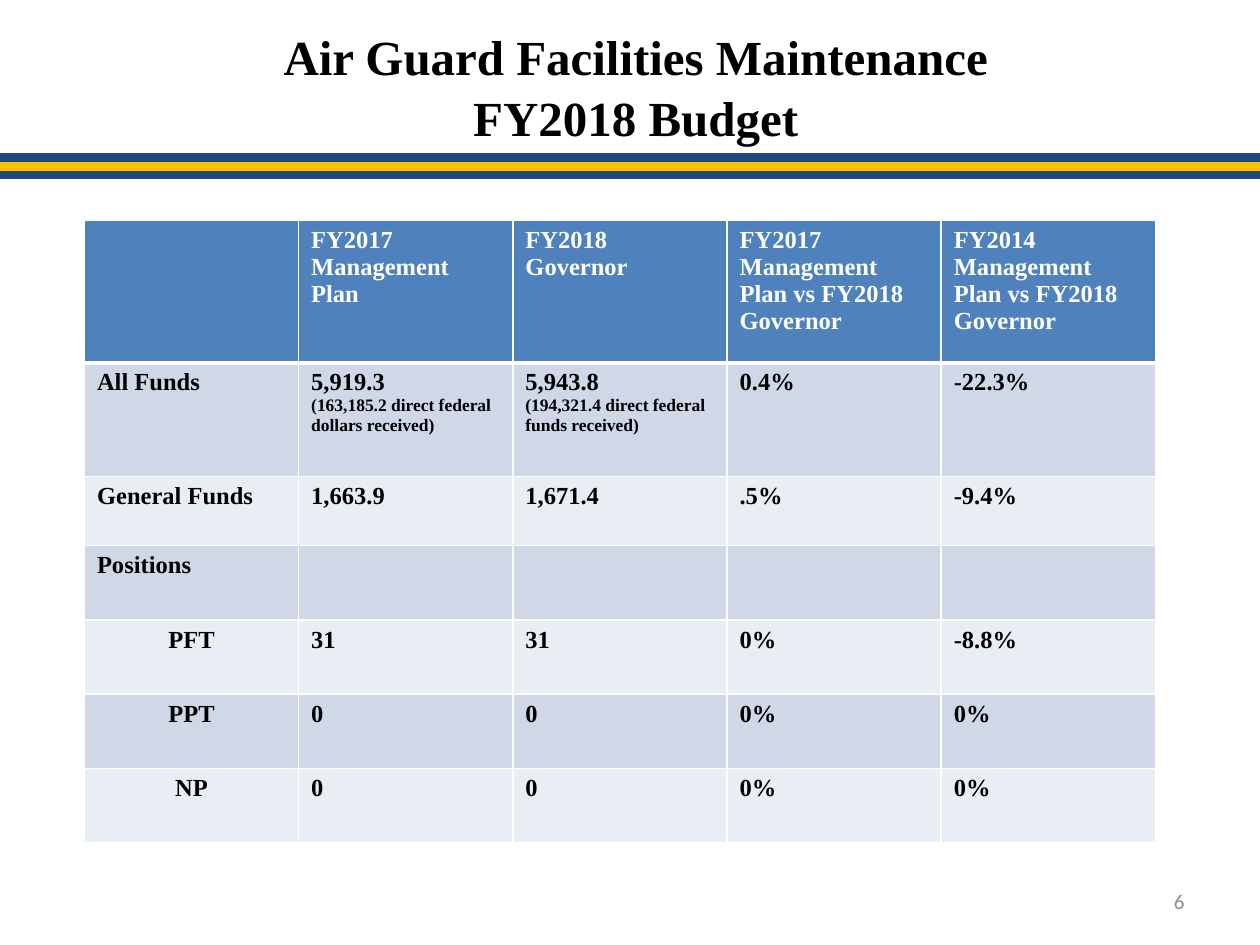
from dataclasses import dataclass

from lxml.etree import SubElement
from pptx import Presentation
from pptx.dml.color import RGBColor
from pptx.enum.shapes import MSO_CONNECTOR
from pptx.enum.text import MSO_ANCHOR, PP_ALIGN
from pptx.oxml.ns import qn
from pptx.slide import Slide
from pptx.util import Inches, Pt

NAVY = RGBColor(0x1F, 0x49, 0x7D)
GOLD = RGBColor(0xFF, 0xC0, 0x00)
BLUE = RGBColor(0x4F, 0x81, 0xBD)
BAND_DARK = RGBColor(0xD0, 0xD8, 0xE8)
BAND_LIGHT = RGBColor(0xE9, 0xED, 0xF4)
WHITE = RGBColor(0xFF, 0xFF, 0xFF)
BLACK = RGBColor(0x00, 0x00, 0x00)
GRAY = RGBColor(0x8C, 0x8C, 0x8C)

HEADINGS = [
    "", "FY2017 Management Plan", "FY2018 Governor",
    "FY2017 Management Plan vs FY2018 Governor",
    "FY2014 Management Plan vs FY2018 Governor",
]
BUDGET = [
    ["All Funds", "5,919.3\n(163,185.2 direct federal dollars received)",
     "5,943.8\n(194,321.4 direct federal funds received)", "0.4%", "-22.3%"],
    ["General Funds", "1,663.9", "1,671.4", ".5%", "-9.4%"],
    ["Positions", "", "", "", ""],
    ["PFT", "31", "31", "0%", "-8.8%"],
    ["PPT", "0", "0", "0%", "0%"],
    ["NP", "0", "0", "0%", "0%"],
]
POSITION_TYPES = {"PFT", "PPT", "NP"}
ROW_HEIGHTS = [1.13, 0.9, 0.55, 0.59, 0.59, 0.59, 0.59]
COLUMN_WIDTH = 1.7


@dataclass
class BudgetSlide:
    s: Slide
    font: str = "Times New Roman"
    number_font: str = "Calibri"

    def run(self, p, text, size, color, bold=True, font=None):
        r = p.add_run()
        r.text = text
        r.font.name = font or self.font
        r.font.size = Pt(size)
        r.font.bold = bold
        r.font.color.rgb = color

    def stripe(self, y, color):
        line = self.s.shapes.add_connector(
            MSO_CONNECTOR.STRAIGHT, Inches(0), Inches(y), Inches(10), Inches(y))
        line.line.color.rgb = color
        line.line.width = Pt(5)
        SubElement(line._element.spPr, qn("a:effectLst"))

    def text_frame(self, left, top, width, height):
        sp = self.s.shapes.add_textbox(
            Inches(left), Inches(top), Inches(width), Inches(height))
        sp.text_frame.word_wrap = True
        return sp.text_frame

    def title(self, lines):
        tf = self.text_frame(1.17, 0.12, 7.75, 1.04)
        tf.margin_top = Inches(0.09)
        for i, text in enumerate(lines):
            p = tf.add_paragraph() if i else tf.paragraphs[0]
            p.alignment = PP_ALIGN.CENTER
            if i:
                p.space_before = Pt(1.5)
            self.run(p, text, 28, BLACK)

    def page_number(self, number):
        tf = self.text_frame(7.17, 6.95, 2.33, 0.4)
        tf.vertical_anchor = MSO_ANCHOR.MIDDLE
        p = tf.paragraphs[0]
        p.alignment = PP_ALIGN.RIGHT
        self.run(p, number, 12, GRAY, False, self.number_font)

    def borders(self, cell, top, bottom):
        tc_pr = cell._tc.get_or_add_tcPr()
        for side, width in (("L", 1), ("R", 1), ("T", top), ("B", bottom)):
            ln = SubElement(tc_pr, qn(f"a:ln{side}"), w=str(Pt(width)))
            fill = SubElement(ln, qn("a:solidFill"))
            SubElement(fill, qn("a:srgbClr"), val=str(WHITE))

    def cell(self, cell, text, fill, color, centered):
        cell.fill.solid()
        cell.fill.fore_color.rgb = fill
        if not text:
            return
        tf = cell.text_frame
        for i, line in enumerate(text.split("\n")):
            p = tf.add_paragraph() if i else tf.paragraphs[0]
            if centered:
                p.alignment = PP_ALIGN.CENTER
            self.run(p, line, 10 if i else 14, color)

    def table(self, rows):
        width = COLUMN_WIDTH * len(rows[0])
        table = self.s.shapes.add_table(
            len(rows), len(rows[0]), Inches(0.67), Inches(1.75),
            Inches(width), Inches(sum(ROW_HEIGHTS))).table
        table.horz_banding = False
        for column in table.columns:
            column.width = Inches(COLUMN_WIDTH)
        for i, values in enumerate(rows):
            table.rows[i].height = Inches(ROW_HEIGHTS[i])
            band = BAND_DARK if i % 2 else BAND_LIGHT
            fill, color = (band, BLACK) if i else (BLUE, WHITE)
            for j, text in enumerate(values):
                cell = table.cell(i, j)
                self.borders(cell, 3 if i == 1 else 1, 1 if i else 3)
                self.cell(cell, text, fill, color, text in POSITION_TYPES)


def main():
    prs = Presentation()
    prs.slide_width, prs.slide_height = Inches(10), Inches(7.5)
    slide = BudgetSlide(prs.slides.add_slide(prs.slide_layouts[6]))
    for i, color in enumerate((NAVY, GOLD, NAVY)):
        slide.stripe(1.25 + 0.07 * i, color)
    slide.page_number("6")
    slide.title(["Air Guard Facilities Maintenance", "FY2018 Budget"])
    slide.table([HEADINGS] + BUDGET)
    prs.save("out.pptx")


if __name__ == "__main__":
    main()
